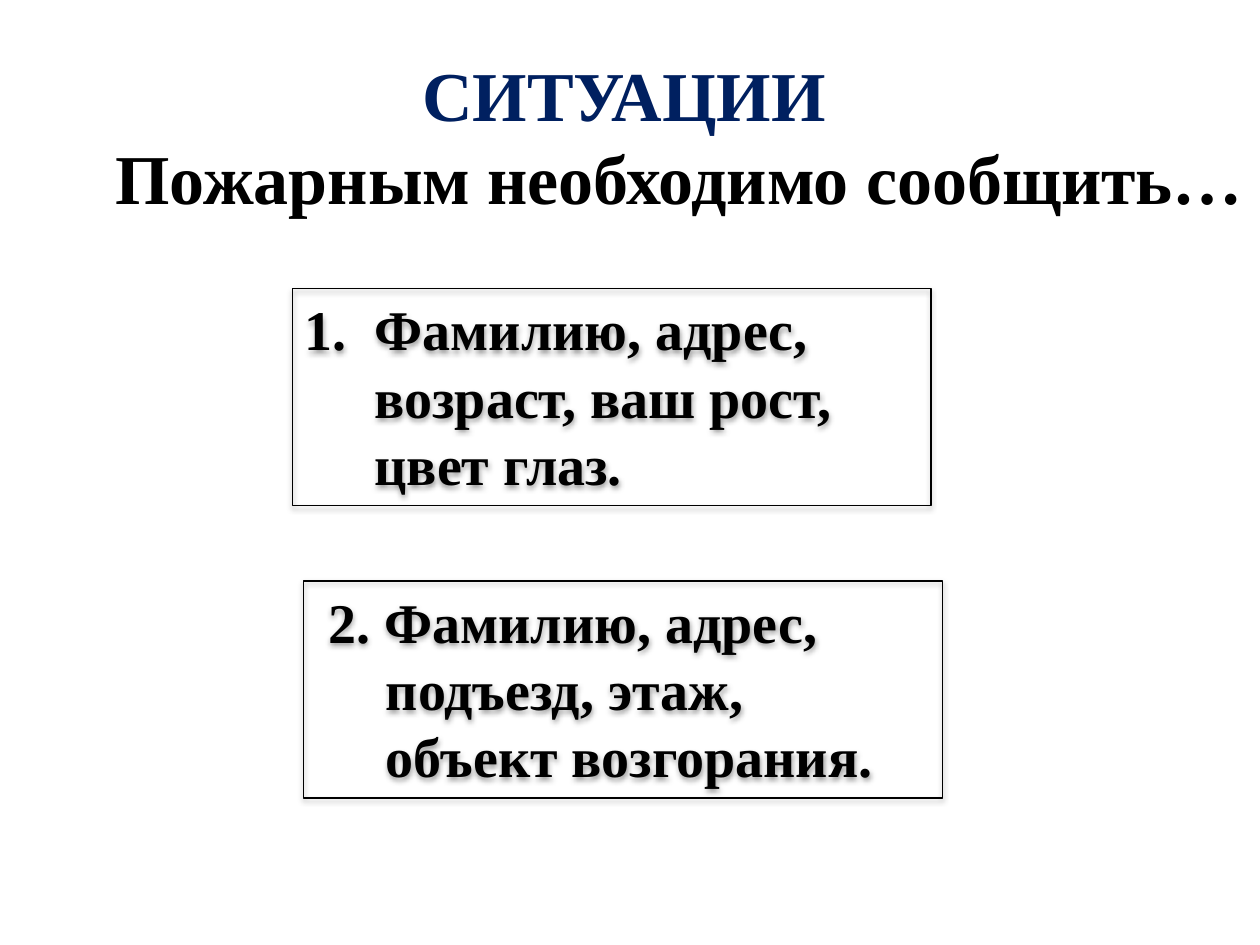
from lxml.etree import SubElement
from pptx import Presentation
from pptx.dml.color import RGBColor
from pptx.enum.shapes import MSO_SHAPE
from pptx.enum.text import MSO_ANCHOR, MSO_AUTO_SIZE, PP_ALIGN
from pptx.oxml.ns import qn
from pptx.util import Pt


def color(value):
    return RGBColor.from_string(value)


class Deck:
    FONT = "Times New Roman"
    BLACK = "000000"
    NAVY = "002060"

    def __init__(self):
        self.prs = Presentation()
        self.prs.slide_width, self.prs.slide_height = Pt(720), Pt(540)
        self.s = self.prs.slides.add_slide(self.prs.slide_layouts[6])

    def style(self, p, size, hex_color, align):
        p.alignment = align
        for r in p.runs:
            r.font.name = self.FONT
            r.font.size = Pt(size)
            r.font.bold = True
            r.font.color.rgb = color(hex_color)

    def heading(self, text, x, y, w, h, hex_color, align):
        tf = self.s.shapes.add_textbox(Pt(x), Pt(y), Pt(w), Pt(h)).text_frame
        tf.word_wrap = False
        tf.auto_size = MSO_AUTO_SIZE.SHAPE_TO_FIT_TEXT
        tf.text = text
        self.style(tf.paragraphs[0], 40, hex_color, align)

    def shadow(self, sp):
        sp.shadow.inherit = False
        effects = sp._element.spPr.find(qn("a:effectLst"))
        outer = SubElement(effects, qn("a:outerShdw"), blurRad=str(Pt(3.1)),
                           dist=str(Pt(1.6)), dir="5400000", rotWithShape="0")
        clr = SubElement(outer, qn("a:srgbClr"), val=self.BLACK)
        SubElement(clr, qn("a:alpha"), val="38000")

    def indent(self, p, left, first=0):
        pPr = p._p.get_or_add_pPr()
        pPr.set("marL", str(Pt(left)))
        pPr.set("indent", str(Pt(first)))
        return pPr

    def number(self, p, left):
        pPr = self.indent(p, left, -left)
        SubElement(pPr, qn("a:buFont"), typeface="+mj-lt")
        SubElement(pPr, qn("a:buAutoNum"), type="arabicPeriod")

    def answer(self, lines, x, y, w=365, h=124, left=40, hanging=None):
        """Framed answer; the first line is auto-numbered unless hanging is set."""
        sp = self.s.shapes.add_shape(MSO_SHAPE.RECTANGLE, Pt(x), Pt(y), Pt(w), Pt(h))
        sp.fill.background()
        sp.line.color.rgb = color(self.BLACK)
        sp.line.width = Pt(0.75)
        self.shadow(sp)
        tf = sp.text_frame
        tf.word_wrap = True
        tf.vertical_anchor = MSO_ANCHOR.TOP
        tf.auto_size = MSO_AUTO_SIZE.SHAPE_TO_FIT_TEXT
        tf.text = "\n".join(lines)
        for i, p in enumerate(tf.paragraphs):
            if i:
                self.indent(p, left)
            elif hanging is None:
                self.number(p, left)
            else:
                self.indent(p, left, -hanging)
            self.style(p, 32, self.BLACK, PP_ALIGN.LEFT)


def main():
    d = Deck()

    # Headings
    d.heading("СИТУАЦИИ", 232.5, 26, 248, 55.5, d.NAVY, PP_ALIGN.CENTER)
    d.heading("Пожарным необходимо сообщить…", 59, 73.5, 665, 55.5, d.BLACK, PP_ALIGN.LEFT)

    # Answers
    d.answer(["Фамилию, адрес, возраст, ваш рост,", "цвет глаз."], 167, 165)
    d.answer(["2. Фамилию, адрес,", "подъезд, этаж,", "объект возгорания."],
             173.5, 332, hanging=33)

    d.prs.save("out.pptx")


if __name__ == "__main__":
    main()
